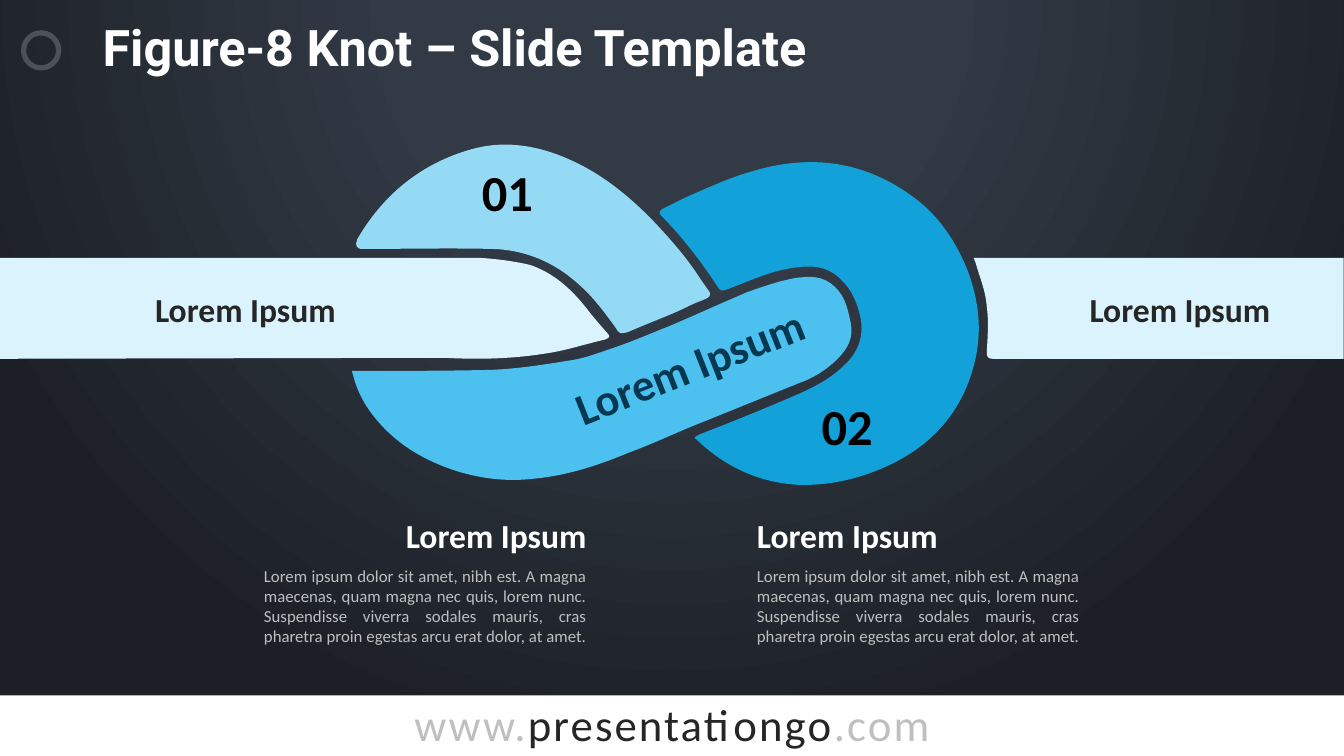
from copy import deepcopy

from lxml import etree
from pptx import Presentation
from pptx.dml.color import RGBColor
from pptx.enum import shapes, text
from pptx.oxml import ns
from pptx.util import Pt

WHITE = RGBColor(0xFF, 0xFF, 0xFF)
BLACK = RGBColor(0x00, 0x00, 0x00)
CHARCOAL = RGBColor(0x26, 0x26, 0x26)
SILVER = RGBColor(0xBF, 0xBF, 0xBF)
SLATE = RGBColor(0x32, 0x3A, 0x45)
NIGHT = RGBColor(0x1C, 0x20, 0x26)
NAVY = RGBColor(0x06, 0x39, 0x51)
OCEAN = RGBColor(0x13, 0xA1, 0xD9)
AZURE = RGBColor(0x4C, 0xC1, 0xEF)
SKY = RGBColor(0x94, 0xDA, 0xF5)
ICE = RGBColor(0xDB, 0xF3, 0xFC)

LEFT, CENTER, RIGHT, JUSTIFY = (text.PP_ALIGN.LEFT, text.PP_ALIGN.CENTER,
                                text.PP_ALIGN.RIGHT, text.PP_ALIGN.JUSTIFY)
TOP, MIDDLE, BOTTOM = (text.MSO_ANCHOR.TOP, text.MSO_ANCHOR.MIDDLE,
                       text.MSO_ANCHOR.BOTTOM)
GROW, FIXED = text.MSO_AUTO_SIZE.SHAPE_TO_FIT_TEXT, text.MSO_AUTO_SIZE.NONE

UNIT = Pt(0.72)

HEADING = "Lorem Ipsum"
BODY = ("Lorem ipsum dolor sit amet, nibh est. A magna maecenas, quam magna nec quis, "
        "lorem nunc. Suspendisse viverra sodales mauris, cras pharetra proin egestas "
        "arcu erat dolor, at amet. ")

RIGHT_LOOP = [
    (655, 213), (654, 212, 654, 209, 656, 208), (664, 204, 672, 200, 680, 196),
    (701, 187, 722, 177, 743, 171), (800, 153, 854, 158, 904, 194),
    (931, 213, 949, 240, 961, 271), (971, 299, 974, 327, 968, 355),
    (956, 411, 920, 448, 867, 468), (843, 477, 818, 482, 792, 481),
    (753, 479, 719, 463, 691, 436), (690, 436, 690, 435, 689, 434),
    (691, 433, 692, 432, 694, 431), (725, 419, 755, 407, 785, 394),
    (804, 386, 823, 377, 838, 362), (852, 349, 858, 332, 853, 312),
    (850, 300, 845, 288, 836, 279), (824, 266, 810, 263, 794, 265),
    (767, 267, 744, 279, 719, 288), (716, 289, 714, 288, 713, 286),
    (696, 260, 677, 235, 655, 213),
]
CROSSING_STRAND = [
    (349, 368), (351, 368, 353, 368, 356, 368), (399, 368, 443, 368, 487, 367),
    (513, 366, 538, 362, 563, 358), (579, 356, 594, 350, 609, 345),
    (627, 339, 645, 331, 663, 324), (689, 313, 715, 301, 741, 290),
    (752, 286, 764, 282, 775, 279), (783, 277, 791, 275, 798, 275),
    (814, 273, 827, 280, 835, 293), (840, 301, 842, 311, 844, 321),
    (847, 335, 841, 346, 831, 356), (820, 367, 807, 375, 793, 380),
    (758, 394, 724, 408, 689, 422), (667, 431, 646, 441, 624, 449),
    (593, 462, 562, 472, 529, 475), (503, 478, 479, 475, 455, 468),
    (423, 458, 395, 442, 374, 417), (362, 403, 354, 388, 350, 371),
    (349, 370, 349, 369, 349, 368),
]
LEFT_END = [
    (441, 355), (476, 357, 511, 356, 546, 350), (564, 347, 582, 341, 600, 337),
    (605, 335, 606, 334, 602, 330), (595, 322, 588, 314, 582, 306),
    (570, 291, 557, 278, 540, 269), (534, 266, 528, 263, 522, 262),
    (508, 259, 493, 257, 478, 256), (0, 256), (0, 356),
]
LEFT_LOOP = [
    (358, 247), (354, 247, 352, 242, 354, 239), (354, 239, 354, 239, 354, 238),
    (380, 193, 418, 162, 468, 148), (500, 139, 532, 144, 562, 157),
    (595, 171, 621, 192, 646, 217), (664, 236, 681, 255, 695, 277),
    (697, 280, 700, 284, 702, 287), (707, 293, 705, 295, 694, 299),
    (686, 302, 679, 306, 672, 309), (656, 316, 640, 322, 624, 329),
    (615, 332, 615, 332, 610, 324), (599, 309, 588, 294, 574, 282),
    (550, 260, 521, 248, 489, 247), (445, 246, 402, 247, 358, 247),
]
RIGHT_END = [
    (985, 356), (980, 356, 979, 354, 979, 349), (980, 334, 981, 318, 979, 304),
    (978, 289, 972, 275, 968, 261), (968, 260, 967, 259, 966, 256),
    (973, 256, 979, 256, 985, 256), (1333, 256), (1333, 356),
]


def paint_background(slide):
    fill = slide.background.fill
    fill.gradient()
    for stop, color, position in zip(fill.gradient_stops, (SLATE, NIGHT), (0.35, 1)):
        stop.color.rgb = color
        stop.position = position
    gradient = slide.element.find(".//" + ns.qn("a:gradFill"))
    stops = gradient.find(ns.qn("a:gsLst"))
    center = deepcopy(stops[0])
    center.set("pos", "0")
    stops.insert(0, center)
    circle = etree.Element(ns.qn("a:path"), path="circle")
    etree.SubElement(circle, ns.qn("a:fillToRect"),
                     l="50000", t="-80000", r="50000", b="180000")
    gradient.replace(gradient.find(ns.qn("a:lin")), circle)


def finish(shape, color):
    shape.shadow.inherit = False
    shape.fill.solid()
    shape.fill.fore_color.rgb = color
    shape.line.fill.background()


def add_plain(slide, kind, box, color):
    shape = slide.shapes.add_shape(kind, *map(Pt, box))
    finish(shape, color)
    return shape


def add_ring(slide):
    ring = add_plain(slide, shapes.MSO_SHAPE.DONUT, (15, 21.6, 28.8, 28.8), WHITE)
    ring.adjustments[0] = 0.13
    color = ring.element.spPr.find(".//" + ns.qn("a:srgbClr"))
    etree.SubElement(color, ns.qn("a:alpha"), val="20000")


def add_strand(slide, outline, color):
    corners = [segment[-2:] for segment in outline]
    left, top = map(min, zip(*corners))
    builder = slide.shapes.build_freeform(*corners[0], scale=UNIT)
    builder.add_line_segments(corners[1:], close=True)
    strand = builder.convert_to_shape()
    finish(strand, color)
    straights = strand.element.findall(".//" + ns.qn("a:lnTo"))
    for straight, segment in zip(straights, outline[1:]):
        if len(segment) == 6:
            curve = etree.Element(ns.qn("a:cubicBezTo"))
            for x, y in zip(segment[::2], segment[1::2]):
                etree.SubElement(curve, ns.qn("a:pt"), x=str(x - left), y=str(y - top))
            straight.getparent().replace(straight, curve)


def add_run(paragraph, words, size, color, bold=True, font="Calibri"):
    run = paragraph.add_run()
    run.text = words
    run.font.name = font
    run.font.size = Pt(size)
    run.font.bold = bold
    run.font.color.rgb = color
    return run


def add_footer(slide):
    band = add_plain(slide, shapes.MSO_SHAPE.RECTANGLE, (0, 496.8, 960, 43.2), WHITE)
    frame = band.text_frame
    frame.vertical_anchor = MIDDLE
    frame.margin_top, frame.margin_bottom = Pt(3.6), Pt(7.2)
    address = frame.paragraphs[0]
    address.alignment = CENTER
    for words, color in (("www.", SILVER), ("presentationgo", CHARCOAL), (".com", SILVER)):
        run = add_run(address, words, 32, color, bold=False)
        run.font._element.set("spc", "150")


def add_label(slide, box, words, size, color, align=CENTER, anchor=MIDDLE, bold=True,
              font="Calibri", wrap=True, inset=0, spacing=None, rotation=0, fit=GROW):
    label = slide.shapes.add_textbox(*map(Pt, box))
    label.rotation = rotation
    frame = label.text_frame
    frame.word_wrap = wrap
    frame.auto_size = fit
    frame.vertical_anchor = anchor
    frame.margin_left, frame.margin_right = Pt(inset), Pt(0)
    frame.margin_top = frame.margin_bottom = Pt(3.6)
    paragraph = frame.paragraphs[0]
    paragraph.alignment = align
    paragraph.line_spacing = spacing
    add_run(paragraph, words, size, color, bold, font)


def add_caption(slide, left, heading_align):
    add_label(slide, (left, 364.3, 230.4, 36), HEADING, 24, WHITE, heading_align, BOTTOM)
    add_label(slide, (left, 400.3, 230.4, 65.5), BODY, 12, SILVER, JUSTIFY, TOP, bold=False)


def main():
    deck = Presentation()
    deck.slide_width, deck.slide_height = Pt(960), Pt(540)
    slide = deck.slides.add_slide(deck.slide_layouts[6])
    paint_background(slide)
    add_footer(slide)
    add_ring(slide)
    add_label(slide, (66.2, 13, 828, 58.3), "Figure-8 Knot – Slide Template", 36, WHITE,
              LEFT, TOP, font="Roboto", inset=7.2, spacing=0.9, fit=FIXED)

    for outline, color in ((RIGHT_LOOP, OCEAN), (CROSSING_STRAND, AZURE),
                           (LEFT_END, ICE), (LEFT_LOOP, SKY), (RIGHT_END, ICE)):
        add_strand(slide, outline, color)

    for left in (90.4, 757.9):
        add_label(slide, (left, 203, 169.9, 36), HEADING, 24, CHARCOAL)
    add_label(slide, (391, 237.6, 202.3, 46), HEADING, 32, NAVY,
              anchor=BOTTOM, rotation=338.5)
    add_caption(slide, 540.7, LEFT)
    add_caption(slide, 188.6, RIGHT)
    for number, left, top in (("01", 337, 111.3), ("02", 579.6, 278.2)):
        add_label(slide, (left, top, 51, 51), number, 36, BLACK, wrap=False)
    deck.save("out.pptx")


if __name__ == "__main__":
    main()
